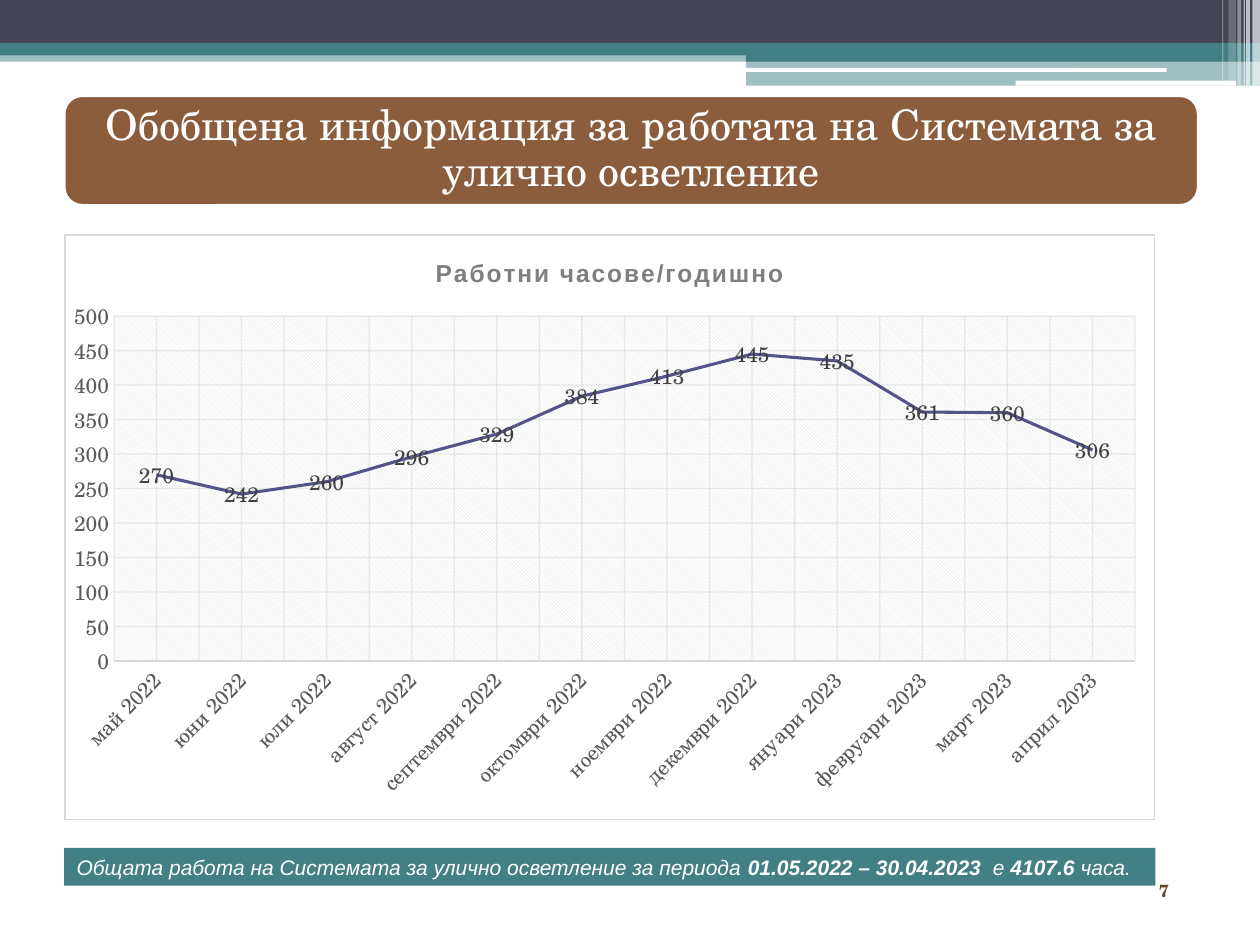
from copy import deepcopy
from dataclasses import dataclass

from lxml import etree
from pptx import Presentation
from pptx.chart.data import CategoryChartData
from pptx.dml.color import RGBColor
from pptx.enum.chart import XL_CHART_TYPE, XL_LABEL_POSITION, XL_TICK_MARK
from pptx.enum.shapes import MSO_SHAPE
from pptx.enum.text import MSO_ANCHOR, MSO_AUTO_SIZE, PP_ALIGN
from pptx.oxml import parse_xml
from pptx.oxml.ns import qn
from pptx.util import Inches, Pt

RECTANGLE = MSO_SHAPE.RECTANGLE
ROUNDED = MSO_SHAPE.ROUNDED_RECTANGLE
NO_TICKS = XL_TICK_MARK.NONE
SERIF, SANS = "TeX Gyre Schola", "Arial"
WHITE, TEAL, NAVY, BROWN = "FFFFFF", "438086", "424456", "8B5D3D"
INDIGO, LIGHT_GREY, AXIS_GREY = "53548A", "D9D9D9", "595959"
LEFT, CONTENT_WIDTH = 0.51, 8.66
NAMESPACES = (
    'xmlns:a="http://schemas.openxmlformats.org/drawingml/2006/main" '
    'xmlns:c="http://schemas.openxmlformats.org/drawingml/2006/chart"'
)


@dataclass(frozen=True)
class Band:
    left: float
    top: float
    width: float
    height: float
    color: str
    opacity: int = 100
    preset: int = RECTANGLE


HEADER_BANDS = [
    Band(0, 0.4, 10, 0.09, TEAL, 50),
    Band(0, 0, 10, 0.34, NAVY),
    Band(0, 0.34, 10, 0.1, TEAL),
    Band(5.92, 0.39, 4.08, 0.1, TEAL),
    Band(5.92, 0.48, 4.08, 0.2, TEAL, 50),
    Band(5.91, 0.54, 3.35, 0.03, WHITE, preset=ROUNDED),
    Band(8.06, 0.64, 1.75, 0.04, WHITE, preset=ROUNDED),
    Band(9.94, 0, 0.06, 0.68, WHITE, 65),
    Band(9.89, 0, 0.03, 0.68, WHITE, 65),
    Band(9.87, 0, 0.01, 0.68, WHITE, 60),
    Band(9.82, 0, 0.03, 0.68, WHITE, 40),
    Band(9.75, 0, 0.06, 0.64, WHITE, 20),
    Band(9.7, 0, 0.01, 0.64, WHITE, 30),
]
WORKING_HOURS = {
    "май 2022": 270, "юни 2022": 242, "юли 2022": 260, "август 2022": 296,
    "септември 2022": 329, "октомври 2022": 384, "ноември 2022": 413,
    "декември 2022": 445, "януари 2023": 435, "февруари 2023": 361,
    "март 2023": 360, "април 2023": 306,
}
SUMMARY_RUNS = [
    ("Общата работа на Системата за улично осветление за периода ", False),
    ("01.05.2022 – 30.04.2023  ", True),
    ("е ", False),
    ("4107.6", True),
    (" часa.", False),
]


def rgb(color: str) -> RGBColor:
    return RGBColor.from_string(color)


def set_font(font, name: str, size: float, color: str) -> None:
    font.name = name
    font.size = Pt(size)
    font.color.rgb = rgb(color)


def set_opacity(fill_format, percent: int) -> None:
    color = fill_format._xPr.find(qn("a:solidFill"))[0]
    etree.SubElement(color, qn("a:alpha")).set("val", str(percent * 1000))


def place(shape, left: float, top: float, width: float, height: float) -> None:
    shape.left, shape.top = Inches(left), Inches(top)
    shape.width, shape.height = Inches(width), Inches(height)


def add_band(slide, band: Band):
    shape = slide.shapes.add_shape(
        band.preset, Inches(band.left), Inches(band.top),
        Inches(band.width), Inches(band.height))
    shape.shadow.inherit = False
    shape.fill.solid()
    shape.fill.fore_color.rgb = rgb(band.color)
    if band.opacity < 100:
        set_opacity(shape.fill, band.opacity)
    shape.line.fill.background()
    return shape


def add_heading(slide) -> None:
    panel = add_band(slide, Band(LEFT, 0.76, 9, 0.87, BROWN, preset=ROUNDED))
    panel.line.color.rgb = rgb(WHITE)
    panel.line.width = Pt(1.5)
    title = slide.shapes.title
    slide.shapes._spTree.append(title._element)  # bring in front of the panel
    place(title, 0.55, 0.8, 8.92, 0.78)
    frame = title.text_frame
    frame.text = "Обобщена информация за работата на Системата за улично осветление"
    frame.auto_size = MSO_AUTO_SIZE.NONE
    frame.vertical_anchor = MSO_ANCHOR.MIDDLE
    frame.margin_left = frame.margin_right = Inches(0.1)
    frame.margin_top = frame.margin_bottom = Inches(0.1)
    paragraph = frame.paragraphs[0]
    paragraph.alignment = PP_ALIGN.CENTER
    paragraph.line_spacing = 0.9
    set_font(paragraph.font, SERIF, 24, WHITE)


def style_axis(axis) -> None:
    axis.major_tick_mark = axis.minor_tick_mark = NO_TICKS
    axis.has_major_gridlines = True
    line = axis.major_gridlines.format.line
    line.color.rgb = rgb(LIGHT_GREY)
    line.width = Pt(0.75)
    set_opacity(line.fill, 54)
    set_font(axis.tick_labels.font, SERIF, 12, AXIS_GREY)


def add_minor_gridlines(axis) -> None:
    """Add minor gridlines that look like the major ones."""
    axis.has_minor_gridlines = True
    major = axis._element.find(qn("c:majorGridlines"))
    minor = axis._element.find(qn("c:minorGridlines"))
    minor.append(deepcopy(major.find(qn("c:spPr"))))


def style_chart_areas(chart) -> None:
    """Frame the chart, hatch the plot area and fix its position."""
    chart_space = chart._chartSpace
    chart_space.find(qn("c:chart")).addnext(parse_xml(
        f'<c:spPr {NAMESPACES}><a:solidFill><a:srgbClr val="{WHITE}"/></a:solidFill>'
        f'<a:ln w="{Pt(0.75)}"><a:solidFill><a:srgbClr val="{LIGHT_GREY}"/>'
        '</a:solidFill></a:ln></c:spPr>'))
    plot_area = chart_space.find(".//" + qn("c:plotArea"))
    for layout in plot_area.findall(qn("c:layout")):
        plot_area.remove(layout)
    position = {"x": 0.045, "y": 0.139, "w": 0.937, "h": 0.59}
    modes = '<c:xMode val="edge"/><c:yMode val="edge"/>'
    values = "".join(f'<c:{key} val="{value}"/>' for key, value in position.items())
    plot_area.insert(0, parse_xml(
        f'<c:layout {NAMESPACES}><c:manualLayout><c:layoutTarget val="inner"/>'
        f'{modes}{values}</c:manualLayout></c:layout>'))
    plot_area.append(parse_xml(
        f'<c:spPr {NAMESPACES}><a:pattFill prst="ltDnDiag">'
        f'<a:fgClr><a:srgbClr val="{LIGHT_GREY}"/></a:fgClr>'
        f'<a:bgClr><a:srgbClr val="{WHITE}"/></a:bgClr></a:pattFill></c:spPr>'))


def add_hours_chart(slide) -> None:
    data = CategoryChartData()
    data.categories = list(WORKING_HOURS)
    data.add_series("Series 1", list(WORKING_HOURS.values()))
    chart = slide.shapes.add_chart(
        XL_CHART_TYPE.LINE, Inches(LEFT), Inches(1.86),
        Inches(CONTENT_WIDTH), Inches(4.65), data).chart
    set_font(chart.font, SERIF, 10, "000000")
    chart.has_legend = False
    chart.has_title = True
    title = chart.chart_title.text_frame
    title.text = "Работни часове/годишно"
    title_font = title.paragraphs[0].runs[0].font
    set_font(title_font, SANS, 14, "7F7F7F")
    title_font.bold = True
    title_font._element.set("spc", "100")

    months, hours = chart.category_axis, chart.value_axis
    for axis in (months, hours):
        style_axis(axis)
    add_minor_gridlines(months)
    months.format.line.color.rgb = rgb(LIGHT_GREY)
    months.format.line.width = Pt(0.75)
    months._element.find(qn("c:txPr")).find(qn("a:bodyPr")).set("rot", "-2700000")
    hours.format.line.fill.background()
    hours.minimum_scale, hours.maximum_scale, hours.major_unit = 0, 500, 50

    plot = chart.plots[0]
    plot.vary_by_categories = False
    series = plot.series[0]
    series.smooth = False
    series.format.line.color.rgb = rgb(INDIGO)
    series.format.line.width = Pt(1.75)
    labels = series.data_labels
    labels.show_value = True
    labels.position = XL_LABEL_POSITION.CENTER
    set_font(labels.font, SERIF, 12, "404040")
    style_chart_areas(chart)


def add_summary(slide) -> None:
    bar = add_band(slide, Band(LEFT, 6.73, CONTENT_WIDTH, 0.3, TEAL))
    bar.text_frame.auto_size = MSO_AUTO_SIZE.SHAPE_TO_FIT_TEXT
    paragraph = bar.text_frame.paragraphs[0]
    paragraph.alignment = PP_ALIGN.LEFT
    set_font(paragraph.font, SANS, 12, WHITE)
    paragraph.font.italic = True
    for text, bold in SUMMARY_RUNS:
        run = paragraph.add_run()
        run.text = text
        run.font.bold = bold


def add_page_number(slide) -> None:
    box = slide.shapes.add_textbox(Inches(9.1), Inches(6.88), Inches(0.36), Inches(0.32))
    frame = box.text_frame
    frame.word_wrap = True
    frame.vertical_anchor = MSO_ANCHOR.BOTTOM
    frame.text = "7"
    font = frame.paragraphs[0].font
    set_font(font, SERIF, 10, "68462E")
    font.bold = True


def main() -> None:
    presentation = Presentation()
    presentation.slide_width, presentation.slide_height = Inches(10), Inches(7.5)
    slide = presentation.slides.add_slide(presentation.slide_layouts[5])
    for band in HEADER_BANDS:
        add_band(slide, band)
    add_page_number(slide)
    add_heading(slide)
    add_hours_chart(slide)
    add_summary(slide)
    presentation.save("out.pptx")


if __name__ == "__main__":
    main()
